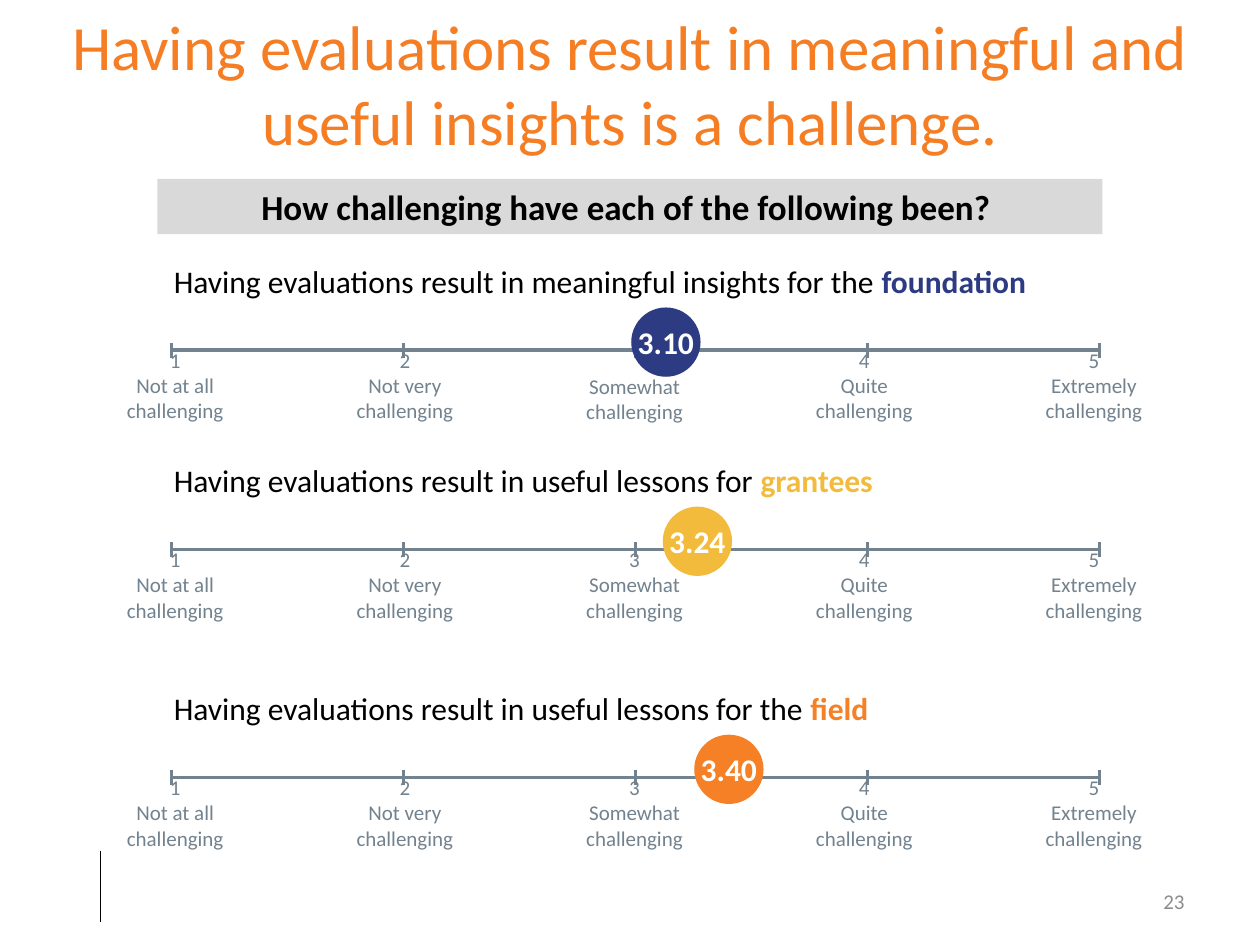
from lxml.etree import SubElement
from pptx import Presentation
from pptx.chart.data import CategoryChartData as ChartData
from pptx.dml.color import RGBColor
from pptx.enum.chart import XL_CHART_TYPE as Kind, XL_TICK_LABEL_POSITION as Label, XL_TICK_MARK as Tick
from pptx.enum.shapes import MSO_CONNECTOR as Link, MSO_SHAPE as Shape
from pptx.enum.text import MSO_ANCHOR as Anchor, PP_ALIGN as Align
from pptx.oxml.ns import qn
from pptx.util import Pt

FONT = "Calibri"
BLACK = RGBColor(0x00, 0x00, 0x00)
WHITE = RGBColor(0xFF, 0xFF, 0xFF)
TITLE = RGBColor(0xF5, 0x7E, 0x25)
SILVER = RGBColor(0xD9, 0xD9, 0xD9)
GRAY = RGBColor(0x8C, 0x8C, 0x8C)
SLATE = RGBColor(0x72, 0x82, 0x8E)
NAVY = RGBColor(0x2C, 0x3B, 0x82)
GOLD = RGBColor(0xF2, 0xBB, 0x3C)
ORANGE = RGBColor(0xF5, 0x80, 0x25)

STEP = 29.4
LINE = 14.65
GRADES = ["Not at all", "Not very", "Somewhat", "Quite", "Extremely"]
ROWS = [
    (144.7, "Having evaluations result in meaningful insights for the ", "foundation", "3.10", NAVY, 360.7),
    (258.5, "Having evaluations result in useful lessons for ", "grantees", "3.24", GOLD, 378.7),
    (388.8, "Having evaluations result in useful lessons for the ", "field", "3.40", ORANGE, 396.7),
]


def style(run, size, color, bold=False):
    font = run.font
    font.name, font.size, font.bold = FONT, Pt(size), bold
    font.color.rgb = color


def write(shape, text, size, color, bold=False, align=Align.CENTER, anchor=Anchor.TOP, wrap=True):
    frame = shape.text_frame
    frame.text = text
    frame.word_wrap = wrap
    frame.vertical_anchor = anchor
    for para in frame.paragraphs:
        para.alignment = align
        for run in para.runs:
            style(run, size, color, bold)


def add_text(slide, box, *args, **opts):
    shape = slide.shapes.add_textbox(*map(Pt, box))
    write(shape, *args, **opts)
    return shape


def add_block(slide, kind, box, fill):
    shape = slide.shapes.add_shape(kind, *map(Pt, box))
    shape.shadow.inherit = False
    shape.fill.solid()
    shape.fill.fore_color.rgb = fill
    shape.line.fill.background()
    return shape


def add_scale(slide, box):
    data = ChartData()
    data.categories = ["1"]
    data.add_series("Series 1", [100])
    chart = slide.shapes.add_chart(Kind.BAR_CLUSTERED, *map(Pt, box), data).chart
    chart.has_legend = chart.has_title = False
    chart.font.name, chart.font.size = FONT, Pt(10)
    chart.font.color.rgb = BLACK
    chart.category_axis.visible = False
    axis = chart.value_axis
    axis.minimum_scale, axis.maximum_scale, axis.major_unit = STEP, 5 * STEP, STEP
    axis.has_major_gridlines = False
    axis.major_tick_mark = Tick.CROSS
    axis.tick_label_position = Label.NONE
    axis.format.line.color.rgb = SLATE
    axis.format.line.width = Pt(2)
    plot = chart.plots[0]
    plot.gap_width = 182
    plot.vary_by_categories = False
    bar = plot.series[0].format
    bar.fill.solid()
    bar.fill.fore_color.rgb = WHITE
    bar.line.color.rgb = WHITE
    bar.line.width = Pt(0.75)

    area = chart.plots[0]._element.getparent()
    for old in area.findall(qn("c:layout")):
        area.remove(old)
    layout = SubElement(area, qn("c:layout"))
    area.insert(0, layout)
    manual = SubElement(layout, qn("c:manualLayout"))
    parts = [("layoutTarget", "inner"), ("xMode", "edge"), ("yMode", "edge"),
             ("x", "0.02"), ("y", "0.1"), ("w", "0.96"), ("h", "0.84")]
    for tag, val in parts:
        SubElement(manual, qn("c:" + tag)).set("val", val)


def add_row(slide, top, lead, group, score, color, left):
    add_scale(slide, (87.1, top - 34.6, 552.2, 95.8))
    dot = add_block(slide, Shape.OVAL, (left, top + 31, 39.6, 39.6), color)
    frame = dot.text_frame
    frame.margin_left = frame.margin_right = frame.margin_top = frame.margin_bottom = 0
    write(dot, score, 18, WHITE, bold=True, anchor=Anchor.MIDDLE, wrap=False)
    for num, grade in enumerate(GRADES, 1):
        x, y = 64.8 + 131.25 * (num - 1), top + 50.4
        lines = [str(num), grade, "challenging"]
        if num == 3 and color == NAVY:
            lines, y = lines[1:], y + LINE
        box = (x, y, 70.6, 7.2 + LINE * len(lines))
        add_text(slide, box, "\n".join(lines), 12, SLATE, wrap=False)
    ask = add_text(slide, (92.2, top, 546.5, 31), lead, 18, BLACK, align=Align.LEFT)
    para = ask.text_frame.paragraphs[0]
    para.line_spacing = 1.07
    run = para.add_run()
    run.text = group
    style(run, 18, color, True)


def add_head(slide, box):
    add_text(slide, box, "Having evaluations result in meaningful and useful insights is a challenge.",
             36, TITLE, anchor=Anchor.MIDDLE)


def add_banner(slide, box):
    bar = add_block(slide, Shape.RECTANGLE, box, SILVER)
    write(bar, "How challenging have each of the following been? ", 20, BLACK,
          bold=True, anchor=Anchor.MIDDLE)


def add_foot(slide, box):
    x, y, wide, high = box
    rule = slide.shapes.add_connector(Link.STRAIGHT, Pt(x), Pt(y), Pt(x), Pt(y + high))
    rule.line.color.rgb = BLACK
    rule.line.width = Pt(0.5)
    SubElement(rule._element.spPr, qn("a:effectLst"))
    add_text(slide, (x + wide - 167.8, y + 14.4, 167.8, 28.8), "23", 12, GRAY,
             align=Align.RIGHT, anchor=Anchor.MIDDLE)


def main():
    deck = Presentation()
    deck.slide_width, deck.slide_height = Pt(720), Pt(540)
    slide = deck.slides.add_slide(deck.slide_layouts[6])
    add_foot(slide, (57.6, 486, 626.4, 41))
    add_head(slide, (0, 5.8, 720, 82.8))
    add_banner(slide, (90, 102.2, 540, 31.7))
    for row in ROWS:
        add_row(slide, *row)
    deck.save("out.pptx")


if __name__ == "__main__":
    main()
